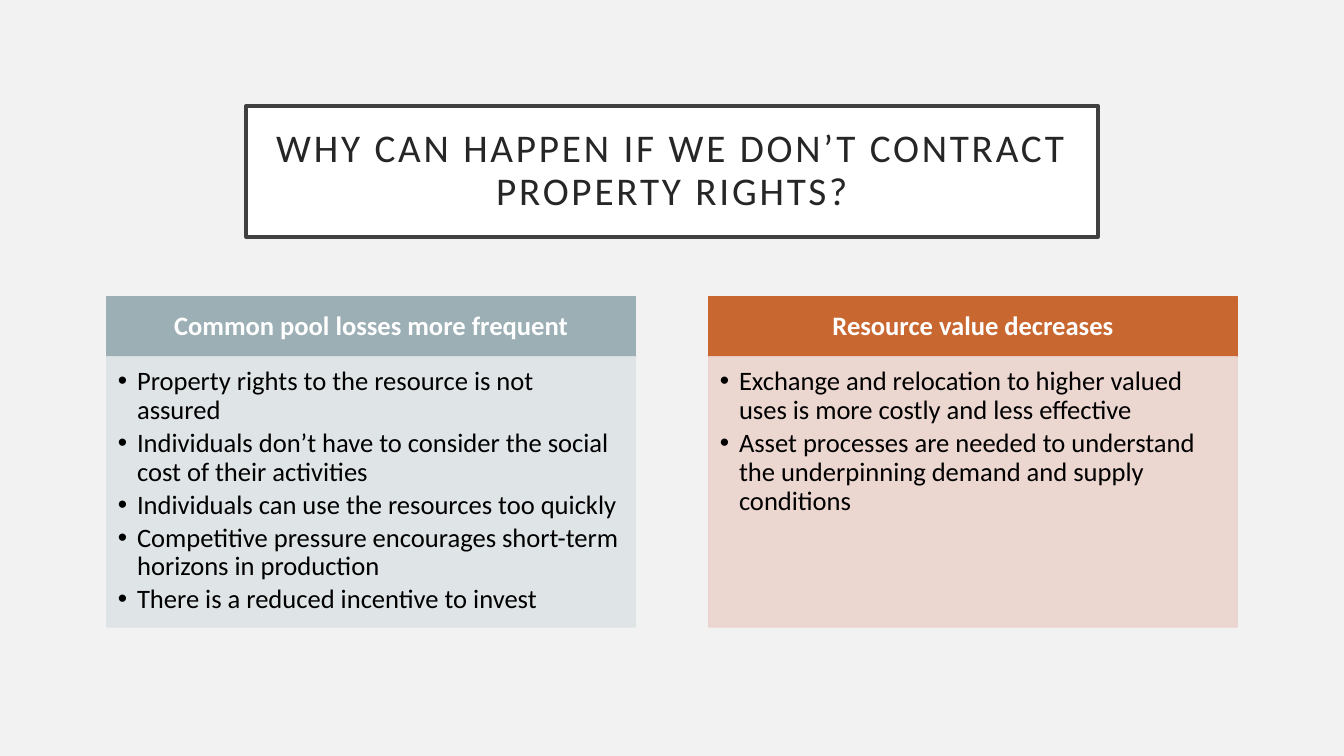
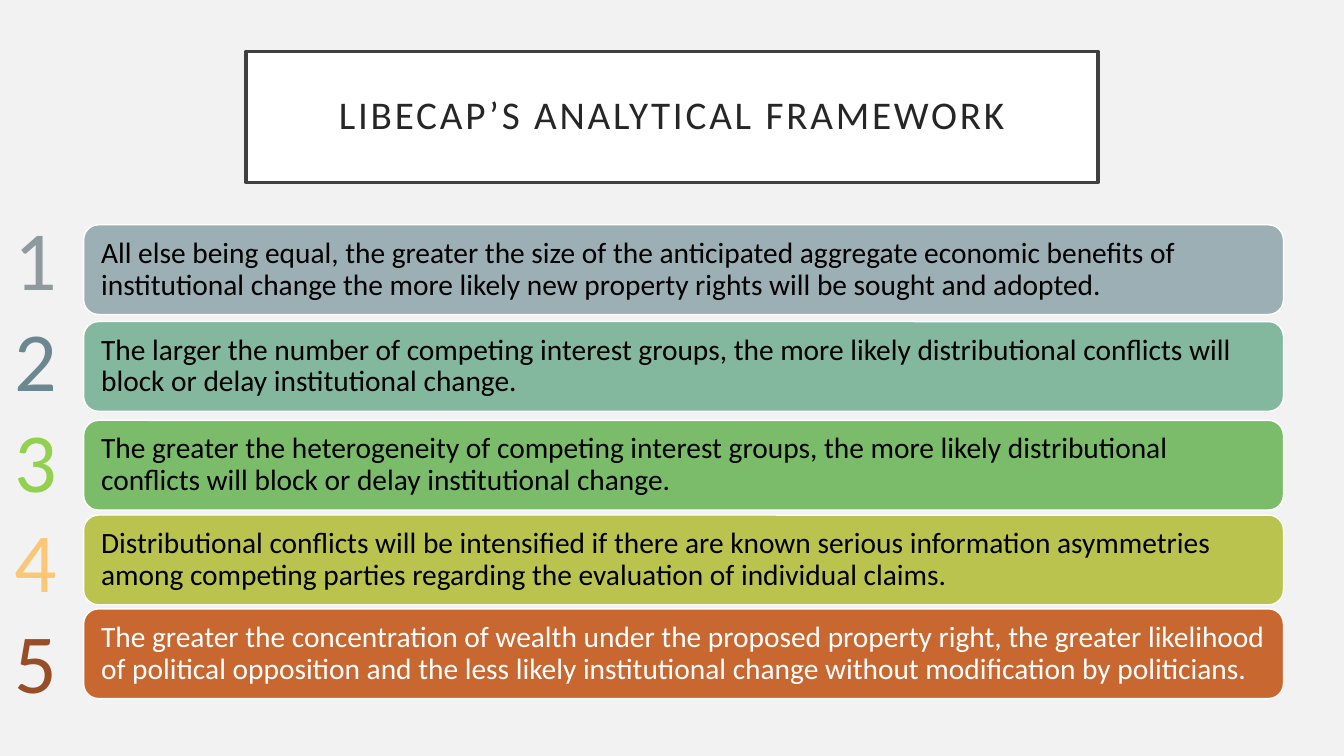
from lxml import etree
from pptx import Presentation
from pptx.dml.color import RGBColor
from pptx.enum.shapes import MSO_SHAPE
from pptx.enum.text import MSO_ANCHOR, PP_ALIGN
from pptx.oxml.ns import qn
from pptx.util import Inches, Pt

RECT = MSO_SHAPE.RECTANGLE
ROUND = MSO_SHAPE.ROUNDED_RECTANGLE
TOP = MSO_ANCHOR.TOP
MID = MSO_ANCHOR.MIDDLE
LEFT = PP_ALIGN.LEFT
CENTER = PP_ALIGN.CENTER

BACK = RGBColor(0xF2, 0xF2, 0xF2)
WHITE = RGBColor(0xFF, 0xFF, 0xFF)
BLACK = RGBColor(0x00, 0x00, 0x00)
FRAME = RGBColor(0x40, 0x40, 0x40)
INK = RGBColor(0x26, 0x26, 0x26)
SLATE = RGBColor(0x9B, 0xAF, 0xB5)
MIST = RGBColor(0xDE, 0xE3, 0xE5)
RUST = RGBColor(0xC9, 0x67, 0x31)
BLUSH = RGBColor(0xEB, 0xD3, 0xCD)
SAGE = RGBColor(0x83, 0xB7, 0x9E)
GREEN = RGBColor(0x7A, 0xBC, 0x69)
OLIVE = RGBColor(0xBA, 0xC3, 0x4D)
GRAY = RGBColor(0x8E, 0x9A, 0x9E)
STEEL = RGBColor(0x6B, 0x88, 0x91)
LIME = RGBColor(0x92, 0xD0, 0x50)
SAND = RGBColor(0xFA, 0xC7, 0x77)
BROWN = RGBColor(0x97, 0x4D, 0x25)

PANELS = [
    (1.06, SLATE, MIST, "Common pool losses more frequent", [
        "Property rights to the resource is not assured",
        "Individuals don’t have to consider the social cost of their activities",
        "Individuals can use the resources too quickly",
        "Competitive pressure encourages short-term horizons in production",
        "There is a reduced incentive to invest",
    ]),
    (7.03, RUST, BLUSH, "Resource value decreases", [
        "Exchange and relocation to higher valued uses is more costly and less effective",
        "Asset processes are needed to understand the underpinning demand and supply conditions",
    ]),
]

BARS = [
    (2.23, SLATE, BLACK, "All else being equal, the greater the size of the anticipated aggregate economic "
     "benefits of institutional change the more likely new property rights will be sought and adopted."),
    (3.19, SAGE, BLACK, "The larger the number of competing interest groups, the more likely "
     "distributional conflicts will block or delay institutional change."),
    (4.17, GREEN, BLACK, "The greater the heterogeneity of competing interest groups, the more likely "
     "distributional conflicts will block or delay institutional change."),
    (5.11, OLIVE, BLACK, "Distributional conflicts will be intensified if there are known serious information "
     "asymmetries among competing parties regarding the evaluation of individual claims."),
    (6.04, RUST, WHITE, "The greater the concentration of wealth under the proposed property right, the greater "
     "likelihood of political opposition and the less likely institutional change without modification "
     "by politicians."),
]

DIGITS = [GRAY, STEEL, LIME, SAND, BROWN]


def assign(item, values):
    for name, value in values.items():
        setattr(item, name, value)


class Deck:
    font = "Calibri"
    sides = ("margin_left", "margin_top", "margin_right", "margin_bottom")

    def __init__(self):
        self.prs = Presentation()
        assign(self.prs, {"slide_width": Inches(13.33), "slide_height": Inches(7.5)})
        self.slide = None

    def page(self, title, top):
        self.slide = self.prs.slides.add_slide(self.prs.slide_layouts[6])
        fill = self.slide.background.fill
        fill.solid()
        fill.fore_color.rgb = BACK
        box = self.shape(RECT, (2.44, top, 8.45, 1.3), WHITE, FRAME, 2.5)
        self.frame(box, (0.2, 0.2, 0.2, 0.2), MID)
        run = self.text(box, [title], 28, INK, align=CENTER)
        run._r.get_or_add_rPr().set("spc", "200")

    def shape(self, kind, place, color, edge, width=1):
        box = self.slide.shapes.add_shape(kind, *map(Inches, place))
        box.shadow.inherit = False
        box.fill.solid()
        box.fill.fore_color.rgb = color
        box.line.color.rgb = edge
        box.line.width = Pt(width)
        return box

    def frame(self, box, insets, anchor):
        assign(box.text_frame, dict(zip(self.sides, map(Inches, insets)),
                                    word_wrap=True, vertical_anchor=anchor))

    def text(self, box, lines, size, color, align=LEFT, bold=False, bullet=False, after=0):
        for i, line in enumerate(lines):
            para = self.para(box, i)
            if bullet:
                self.bullet(para)
            assign(para, {"alignment": align, "line_spacing": 0.9, "space_after": Pt(after)})
            run = self.run(para, line, size, color, bold)
        return run

    def para(self, box, index):
        frame = box.text_frame
        return frame.add_paragraph() if index else frame.paragraphs[0]

    def run(self, para, text, size, color, bold=False):
        run = para.add_run()
        run.text = text
        assign(run.font, {"name": self.font, "size": Pt(size), "bold": bold})
        run.font.color.rgb = color
        return run

    def bullet(self, para):
        props = para._p.get_or_add_pPr()
        props.set("marL", str(Inches(0.19)))
        props.set("indent", str(-Inches(0.19)))
        etree.SubElement(props, qn("a:buFont"), typeface="Arial")
        etree.SubElement(props, qn("a:buChar"), char="•")

    def fade(self, box, share):
        for color in box._element.spPr.iter(qn("a:srgbClr")):
            etree.SubElement(color, qn("a:alpha"), val=str(share * 1000))

    def panel(self, left, color, tint, title, lines):
        head = self.shape(RECT, (left, 2.94, 5.24, 0.6), color, color)
        self.frame(head, (0.15, 0.08, 0.15, 0.08), MID)
        self.text(head, [title], 19, WHITE, align=CENTER, bold=True)
        body = self.shape(RECT, (left, 3.54, 5.24, 2.68), tint, tint)
        self.fade(body, 90)
        self.frame(body, (0.11, 0.11, 0.15, 0.17), TOP)
        self.text(body, lines, 19, BLACK, bullet=True, after=3)

    def bar(self, top, color, ink, text):
        box = self.shape(ROUND, (0.83, top, 11.9, 0.89), color, WHITE)
        self.frame(box, (0.13, 0.13, 0.13, 0.13), MID)
        self.text(box, [text], 21, ink)

    def digits(self, colors):
        box = self.slide.shapes.add_textbox(*map(Inches, (0.05, 2, 0.56, 5.2)))
        self.frame(box, (0.1, 0.05, 0, 0.05), TOP)
        for i, color in enumerate(colors):
            self.run(self.para(box, i), str(i + 1), 60, color)


def main():
    deck = Deck()
    deck.page("WHY CAN HAPPEN IF WE DON’T CONTRACT PROPERTY RIGHTS?", 1.05)
    for panel in PANELS:
        deck.panel(*panel)
    deck.page("LIBECAP’S ANALYTICAL FRAMEWORK", 0.51)
    for bar in BARS:
        deck.bar(*bar)
    deck.digits(DIGITS)
    deck.prs.save("out.pptx")


if __name__ == "__main__":
    main()
